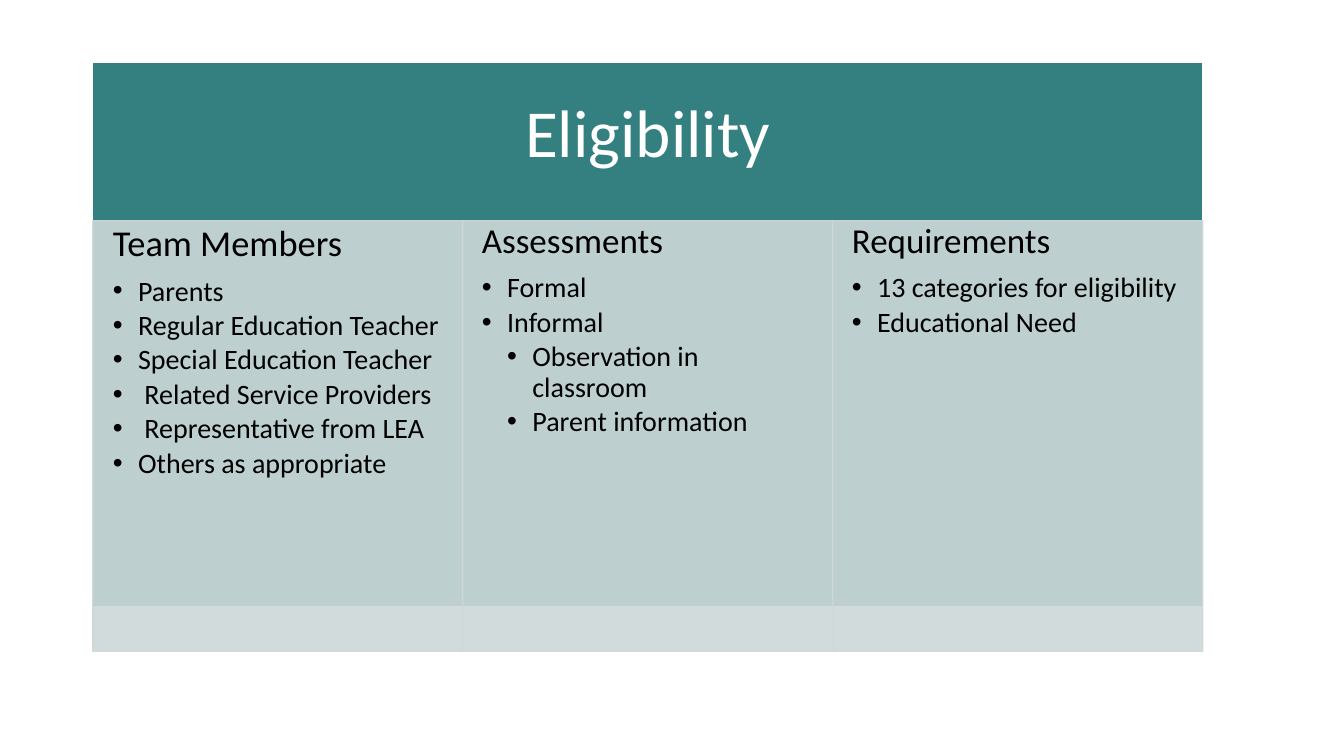
from dataclasses import dataclass

from lxml.etree import SubElement
from pptx import Presentation
from pptx.dml.color import RGBColor
from pptx.enum.shapes import MSO_SHAPE
from pptx.enum.text import MSO_ANCHOR, PP_ALIGN
from pptx.oxml.ns import qn
from pptx.util import Inches, Pt


@dataclass(frozen=True)
class Theme:
    font: str = "Calibri"
    teal: str = "347F7F"
    pale: str = "CED8D8"
    white: str = "FFFFFF"
    black: str = "000000"
    title: int = 48
    body: int = 20
    opaque: int = 90


THEME = Theme()

# Grid: three columns under one banner
LEFT, TOP, COL = 0.92, 0.62, 3.67
HEAD, BACK, PANEL = 1.57, 5.4, 4.27
INDENT = 0.25

# Heading, its size, inner margins (side, top), items with their level
PANELS = [
    ("Team Members", 26, (0.2, 0.04), [
        (1, "Parents"),
        (1, "Regular Education Teacher"),
        (1, "Special Education Teacher"),
        (1, " Related Service Providers"),
        (1, " Representative from LEA"),
        (1, "Others as appropriate"),
    ]),
    ("Assessments", 25, (0.19, 0.03), [
        (1, "Formal"),
        (1, "Informal"),
        (2, "Observation in classroom"),
        (2, "Parent information"),
    ]),
    ("Requirements", 25, (0.19, 0.03), [
        (1, "13 categories for eligibility"),
        (1, "Educational Need"),
    ]),
]


def add_box(slide, area, fill, line, pad, alpha=100):
    """Draw a filled rectangle and return its text frame."""
    box = slide.shapes.add_shape(MSO_SHAPE.RECTANGLE, *map(Inches, area))
    box.shadow.inherit = False
    box.line.width = Pt(1)
    for paint, color in ((box.fill, fill), (box.line.fill, line)):
        paint.solid()
        paint.fore_color.rgb = RGBColor.from_string(color)
    if alpha < 100:
        for color in box._element.spPr.iter(qn("a:srgbClr")):
            SubElement(color, qn("a:alpha"), val=str(alpha * 1000))
    frame = box.text_frame
    frame.word_wrap = True
    frame.vertical_anchor = MSO_ANCHOR.TOP
    side, top = map(Inches, pad)
    frame.margin_left = frame.margin_right = side
    frame.margin_top = frame.margin_bottom = top
    return frame


def add_bullet(para, level):
    """Give a paragraph a round bullet and a hanging indent."""
    para.level = level
    props = para._p.get_or_add_pPr()
    props.set("marL", str(Inches(INDENT * level)))
    props.set("indent", str(Inches(-INDENT)))
    SubElement(props, qn("a:buFont"), typeface="Arial")
    SubElement(props, qn("a:buChar"), char="•")


def set_text(para, text, size, color, gap, align=PP_ALIGN.LEFT):
    """Write one paragraph; gap is a share of its type size."""
    para.text = text
    para.alignment = align
    para.line_spacing = 0.9
    para.space_before = Pt(0)
    para.space_after = Pt(size * gap)
    para.font.name = THEME.font
    para.font.size = Pt(size)
    para.font.color.rgb = RGBColor.from_string(color)


def add_banner(slide, title):
    area = (LEFT, TOP, 3 * COL, BACK)
    frame = add_box(slide, area, THEME.teal, THEME.white, (0.37, 0.37))
    set_text(frame.paragraphs[0], title, THEME.title, THEME.white, 0.35,
             PP_ALIGN.CENTER)


def add_panel(slide, index, head, size, pad, items):
    area = (LEFT + index * COL, TOP + HEAD, COL, PANEL)
    frame = add_box(slide, area, THEME.pale, THEME.pale, pad, THEME.opaque)
    set_text(frame.paragraphs[0], head, size, THEME.black, 0.35)
    for level, text in items:
        para = frame.add_paragraph()
        add_bullet(para, level)
        set_text(para, text, THEME.body, THEME.black, 0.15)


def main():
    deck = Presentation()
    deck.slide_width, deck.slide_height = Inches(13.33), Inches(7.5)
    slide = deck.slides.add_slide(deck.slide_layouts[6])

    # Banner behind, panels in front
    add_banner(slide, "Eligibility")
    for index, panel in enumerate(PANELS):
        add_panel(slide, index, *panel)

    deck.save("out.pptx")


if __name__ == "__main__":
    main()
